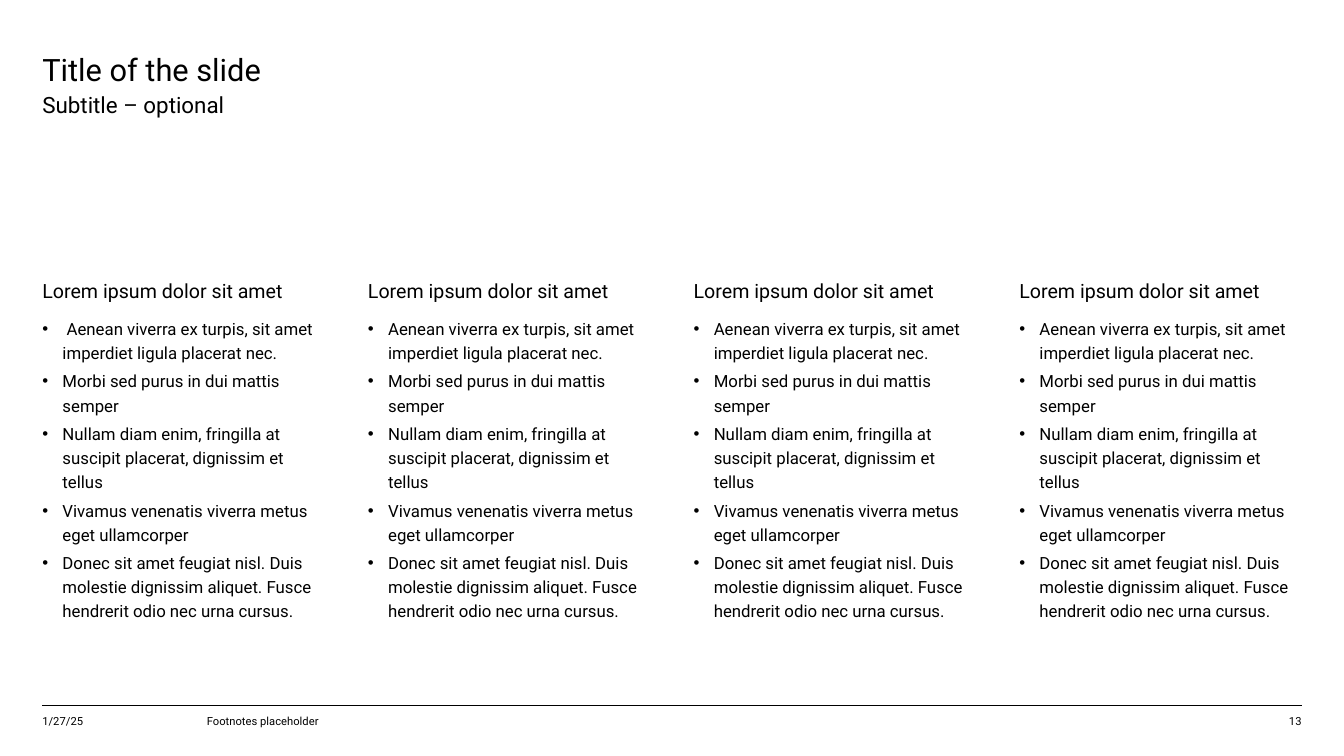
from dataclasses import dataclass

from lxml import etree
from pptx import Presentation
from pptx import util as u
from pptx.dml.color import RGBColor
from pptx.enum import shapes, text
from pptx.oxml.ns import qn


@dataclass(frozen=True)
class Theme:
    """Fonts, colours and type sizes of the slide."""
    font: str = "Roboto"
    ink: RGBColor = RGBColor(0, 0, 0)
    paper: RGBColor = RGBColor(255, 255, 255)
    title: int = 22
    subtitle: int = 16
    heading: int = 14
    body: int = 12
    footer: int = 8


class ColumnSlide:
    """A slide on a grid of four columns and 75 rows."""

    MARGIN, PITCH, GAP, ROW = 0.42, 3.23, 0.43, 0.1

    def __init__(self, deck, theme):
        """Add a title-only slide to the deck."""
        self.theme = theme
        self.slide = deck.slides.add_slide(deck.slide_layouts[5])

    def cell(self, column, row, columns, rows):
        """Turn a grid area into left, top, width and height."""
        return (u.Inches(self.MARGIN + column * self.PITCH), u.Inches(row * self.ROW),
                u.Inches(columns * self.PITCH - self.GAP), u.Inches(rows * self.ROW))

    def prepare(self, frame, anchor=text.MSO_ANCHOR.TOP, bottom=0):
        """Give a text frame its wrapping, anchor and insets."""
        frame.word_wrap = True
        frame.auto_size = text.MSO_AUTO_SIZE.NONE
        frame.vertical_anchor = anchor
        frame.margin_left = frame.margin_top = frame.margin_right = 0
        frame.margin_bottom = u.Inches(bottom)

    def style(self, paragraph, size, align=text.PP_ALIGN.LEFT, spacing=1.0):
        """Set the look of one paragraph."""
        paragraph.alignment = align
        paragraph.line_spacing = spacing
        paragraph.font.name = self.theme.font
        paragraph.font.size = u.Pt(size)
        paragraph.font.color.rgb = self.theme.ink

    def title(self, words, area):
        """Move and format the title placeholder."""
        title = self.slide.shapes.title
        title.left, title.top, title.width, title.height = self.cell(*area)
        title.text_frame.text = words
        self.prepare(title.text_frame)
        self.style(title.text_frame.paragraphs[0], self.theme.title)

    def label(self, words, area, size, align=text.PP_ALIGN.LEFT):
        """Add a single line of text."""
        frame = self.slide.shapes.add_textbox(*self.cell(*area)).text_frame
        frame.text = words
        self.prepare(frame)
        self.style(frame.paragraphs[0], size, align)

    def heading(self, words, area):
        """Add a filled column heading."""
        heading = self.slide.shapes.add_shape(shapes.MSO_SHAPE.RECTANGLE, *self.cell(*area))
        heading.shadow.inherit = False
        heading.fill.solid()
        heading.fill.fore_color.rgb = self.theme.paper
        heading.line.fill.background()
        heading.text_frame.text = words
        self.prepare(heading.text_frame, text.MSO_ANCHOR.BOTTOM, 0.08)
        self.style(heading.text_frame.paragraphs[0], self.theme.heading, spacing=u.Pt(16))

    def bullets(self, points, area):
        """Add a bulleted list."""
        frame = self.slide.shapes.add_textbox(*self.cell(*area)).text_frame
        self.prepare(frame)
        for index, point in enumerate(points):
            paragraph = frame.add_paragraph() if index else frame.paragraphs[0]
            paragraph.text = point
            properties = paragraph._p.get_or_add_pPr()
            properties.set("marL", str(u.Inches(0.2)))
            properties.set("indent", str(u.Inches(-0.2)))
            etree.SubElement(properties, qn("a:buFont"), typeface="Arial")
            etree.SubElement(properties, qn("a:buChar"), char="•")
            self.style(paragraph, self.theme.body, spacing=1.2)
            paragraph.space_before = u.Pt(3 if index else 0)

    def rule(self, row):
        """Draw a line across all columns."""
        left, top, width, _ = self.cell(0, row, 4, 0)
        rule = self.slide.shapes.add_connector(
            shapes.MSO_CONNECTOR.STRAIGHT, left, top, left + width, top)
        rule.line.color.rgb = self.theme.ink
        rule.line.width = u.Pt(0.75)
        etree.SubElement(rule._element.spPr, qn("a:effectLst"))


HEADING = "Lorem ipsum dolor sit amet"
POINTS = [
    "Aenean viverra ex turpis, sit amet imperdiet ligula placerat nec.",
    "Morbi sed purus in dui mattis semper",
    "Nullam diam enim, fringilla at suscipit placerat, dignissim et tellus",
    "Vivamus venenatis viverra metus eget ullamcorper",
    "Donec sit amet feugiat nisl. Duis molestie dignissim aliquet. "
    "Fusce hendrerit odio nec urna cursus.",
]


def main():
    """Build the slide and save it."""
    deck = Presentation()
    deck.slide_width, deck.slide_height = u.Inches(13.33), u.Inches(7.5)
    theme = Theme()
    page = ColumnSlide(deck, theme)
    page.rule(70)
    page.title("Title of the slide", (0, 5, 3.5, 3.7))
    page.label("Subtitle – optional", (0, 9, 3.5, 3), theme.subtitle)
    for column in range(4):
        first = POINTS[0] if column else " " + POINTS[0]
        page.heading(HEADING, (column, 28, 1, 2.8))
        page.bullets([first, *POINTS[1:]], (column, 31.2, 1, 43.8))
    page.label("1/27/25", (0, 70.9, 0.47, 2), theme.footer)
    page.label("Footnotes placeholder", (0.505, 70.9, 3.1, 2), theme.footer)
    page.label("13", (3.68, 70.9, 0.32, 2), theme.footer, text.PP_ALIGN.RIGHT)
    deck.save("out.pptx")


if __name__ == "__main__":
    main()
